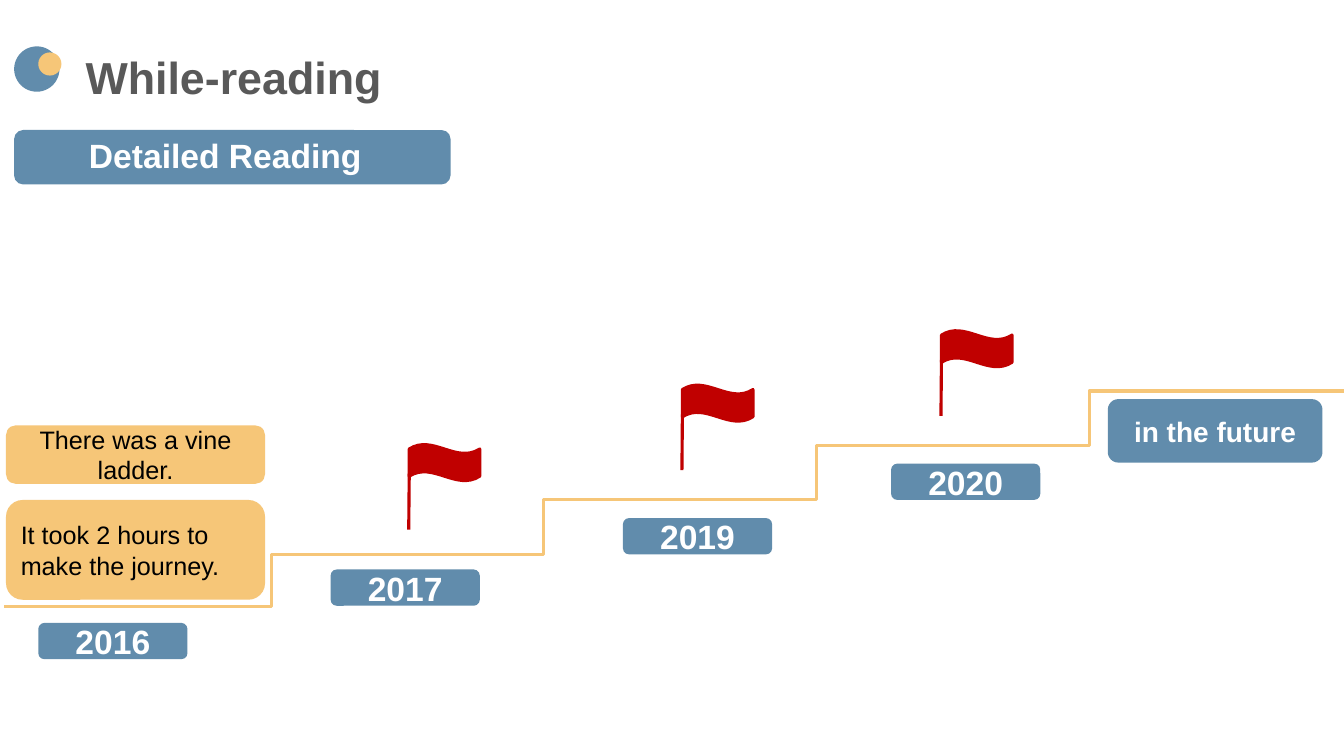
import pptx
import pptx.util
import pptx.dml.color
import pptx.enum.shapes
import pptx.enum.text
import lxml.etree

COLORS = {"blue": "618CAC", "sand": "F6C678", "red": "C00000",
          "gray": "595959", "white": "FFFFFF", "black": "000000"}
SHAPES = pptx.enum.shapes.MSO_SHAPE
CONNECTORS = pptx.enum.shapes.MSO_CONNECTOR
ALIGN = pptx.enum.text.PP_ALIGN
ANCHOR = pptx.enum.text.MSO_ANCHOR

deck = pptx.Presentation()
deck.slide_width = pptx.util.Inches(13.333)
deck.slide_height = pptx.util.Inches(7.5)
page = deck.slides.add_slide(deck.slide_layouts[6])
CELL = deck.slide_height / 75  # square grid: 75 rows, 133.33 columns


def add_block(place, text="", kind=None, fill=None, line=None, size=24, color="white",
              bold=True, align=ALIGN.CENTER, anchor=ANCHOR.MIDDLE, spacing=None):
    """Add a shape, or a text box if no kind is given; place is in grid cells."""
    frame = [round(cells * CELL) for cells in place]
    if kind is None:
        box = page.shapes.add_textbox(*frame)
    else:
        box = page.shapes.add_shape(kind, *frame)
        box.shadow.inherit = False
        box.fill.solid()
        box.fill.fore_color.rgb = pptx.dml.color.RGBColor.from_string(COLORS[fill])
        if line:
            box.line.color.rgb = pptx.dml.color.RGBColor.from_string(COLORS[line])
            box.line.width = pptx.util.Pt(2.25)
        else:
            box.line.fill.background()
    if text:
        box.text_frame.word_wrap = True
        box.text_frame.vertical_anchor = anchor
        para = box.text_frame.paragraphs[0]
        para.alignment = align
        if spacing:
            para.line_spacing = spacing
        span = para.add_run()
        span.text = text
        span.font.name = "Arial"
        span.font.size = pptx.util.Pt(size)
        span.font.bold = bold
        span.font.color.rgb = pptx.dml.color.RGBColor.from_string(COLORS[color])


def add_line(kind, ends, color):
    connector = page.shapes.add_connector(kind, *[round(cells * CELL) for cells in ends])
    connector.line.color.rgb = pptx.dml.color.RGBColor.from_string(COLORS[color])
    connector.line.width = pptx.util.Pt(2.25)
    lxml.etree.SubElement(connector.element.spPr, pptx.oxml.ns.qn("a:effectLst"))


# Heading
add_block((7.5, 4.4, 34.5, 6.4), "While-reading", size=32, color="gray",
          align=ALIGN.LEFT, anchor=ANCHOR.TOP)
add_block((1.4, 4.6, 4.5, 4.5), kind=SHAPES.OVAL, fill="blue")
add_block((3.8, 5.2, 2.3, 2.3), kind=SHAPES.OVAL, fill="sand")
add_block((1.4, 12.9, 43.3, 5.4), kind=SHAPES.ROUNDED_RECTANGLE, fill="blue")
add_block((4.3, 12.1, 36.1, 5.4), "Detailed Reading", anchor=ANCHOR.TOP, spacing=1.2)

# Notes on the first step
for top, height, note, align in [
        (42.2, 5.8, "There was a vine ladder.", ALIGN.CENTER),
        (49.6, 9.9, "It took 2 hours to make the journey.", ALIGN.LEFT)]:
    add_block((0.6, top, 25.7, height), note, kind=SHAPES.ROUNDED_RECTANGLE, fill="sand",
              size=18, color="black", bold=False, align=align)

# Staircase: each elbow rises from one level to the next
levels = [60.2, 55, 49.6, 44.2, 38.8]
for step, (low, high) in enumerate(zip(levels, levels[1:])):
    left = 0.4 + 27.05 * step
    add_line(CONNECTORS.ELBOW, (left, low, left + 53, high), "sand")

# Time labels
for left, top, year in [(3.8, 61.8, "2016"), (32.8, 56.5, "2017"),
                        (61.8, 51.4, "2019"), (88.4, 46, "2020")]:
    add_block((left, top, 14.8, 3.6), year, kind=SHAPES.ROUNDED_RECTANGLE, fill="blue")
add_block((109.9, 39.6, 21.3, 6.3), "in the future", kind=SHAPES.ROUNDED_RECTANGLE,
          fill="blue", size=20)

# Flags
for left, top in [(40.6, 44.1), (67.7, 38.2), (93.4, 32.8)]:
    add_block((left, top, 7, 3.6), kind=SHAPES.WAVE, fill="red", line="red")
    add_line(CONNECTORS.STRAIGHT, (left, top + 2.9, left - 0.05, top + 8.45), "red")

deck.save("out.pptx")
